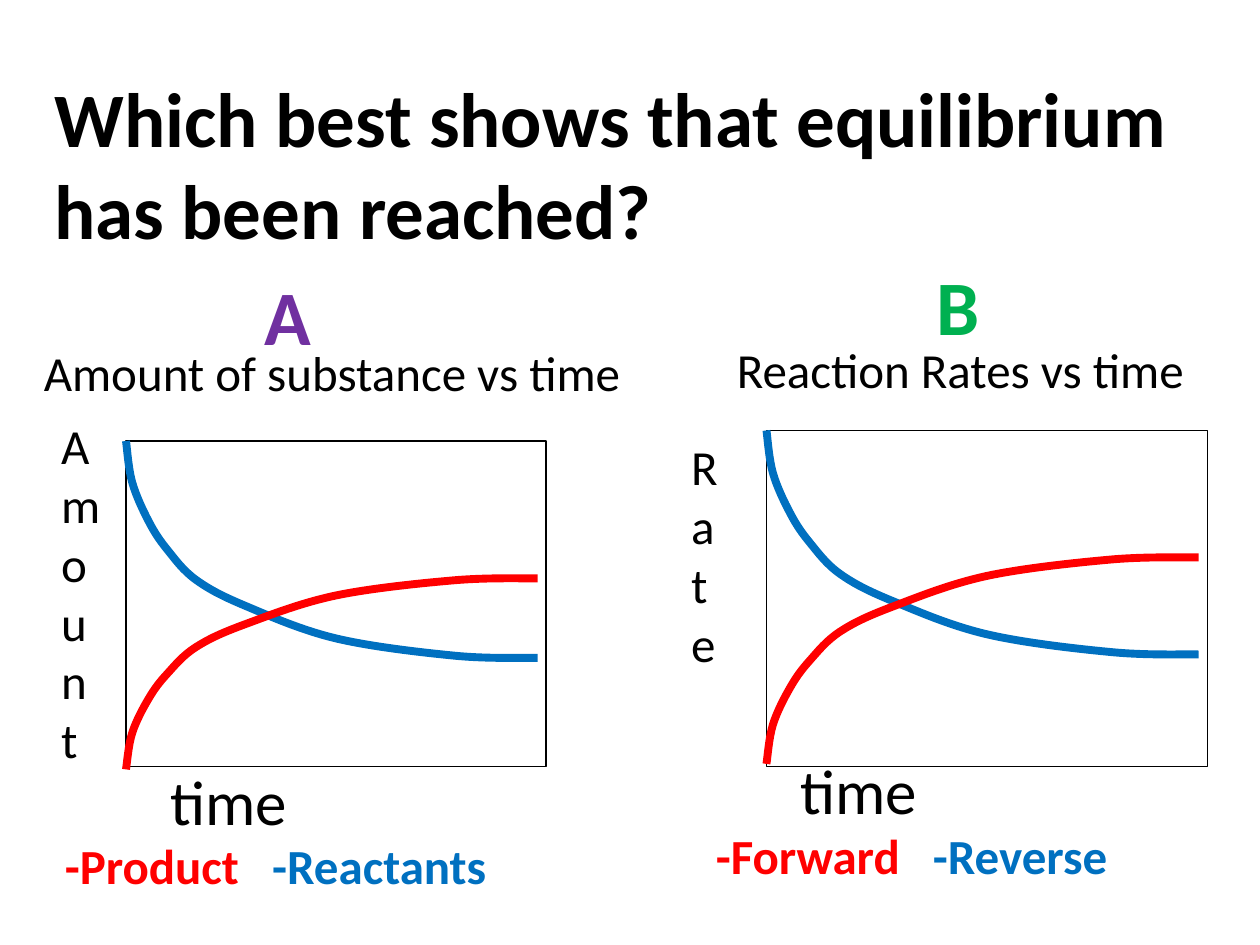
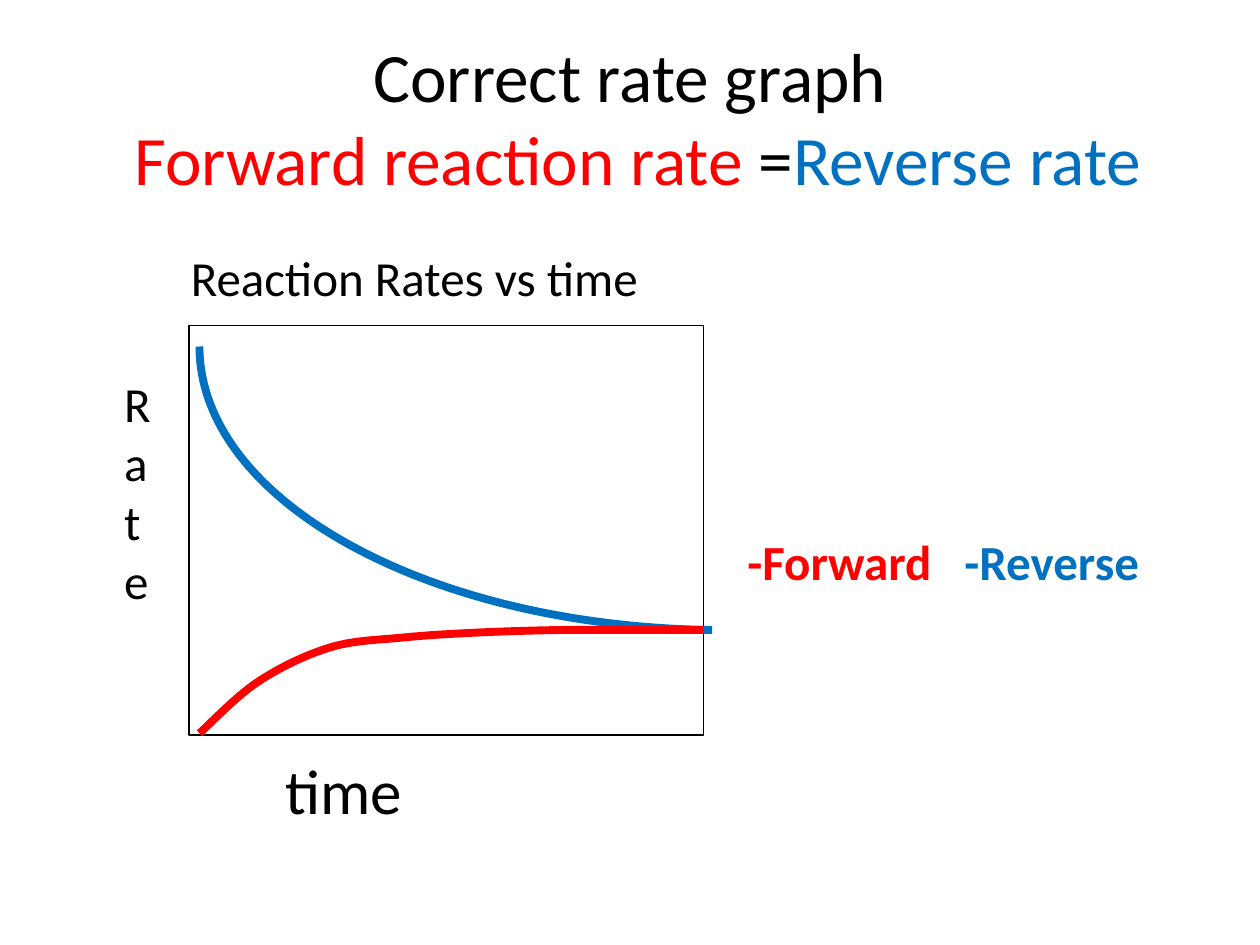
from lxml import etree
from pptx import Presentation
from pptx.dml.color import RGBColor
from pptx.enum.shapes import MSO_SHAPE
from pptx.enum.text import MSO_ANCHOR, PP_ALIGN
from pptx.oxml.ns import qn
from pptx.util import Pt

RECTANGLE = MSO_SHAPE.RECTANGLE
TOP, MIDDLE = MSO_ANCHOR.TOP, MSO_ANCHOR.MIDDLE
LEFT, CENTER = PP_ALIGN.LEFT, PP_ALIGN.CENTER

FONT = "Calibri"
BLACK, WHITE, RED, BLUE = "000000", "FFFFFF", "FF0000", "0070C0"
PURPLE, GREEN = "7030A0", "00B050"
TITLE_SIZE, ANSWER_TITLE_SIZE, TIME_SIZE, LABEL_SIZE = 44, 39.6, 36, 28

QUESTION = "Which best shows that equilibrium has been reached?"
ANSWER = [("Correct rate graph", BLACK), ("\n", BLACK), (" ", BLACK),
          ("Forward reaction rate ", RED), ("=", BLACK), ("Reverse rate", BLUE)]

# Boxes are left, top, width, height; heights of curve ends are slide positions.
AMOUNT_GRAPH = {
    "frame": (72, 252, 240, 186),
    "heading": ("Amount of substance vs time", (18, 192, 402, 41)),
    "axis": ("Amount", (30, 234, 12, 186)),
    "time": (90.3, 432, 156, 60),
    "legend": ("-Product", "-Reactants", 118.5, (30, 474, 288, 41)),
    "letter": ("A", PURPLE, (144, 150, 54, 60)),
    "red_ends": (439.7, 330.5),
}
RATE_GRAPH = {
    "frame": (438, 246, 252, 192),
    "heading": ("Reaction Rates vs time", (414, 190.4, 288, 41)),
    "axis": ("Rate", (390, 246, 12, 186)),
    "time": (450.3, 426, 156, 60),
    "legend": ("-Forward", "-Reverse", 124, (402, 468, 318, 41)),
    "letter": ("B", GREEN, (528, 144, 54, 60)),
    "red_ends": (436.5, 318.5),
}
CORRECT_GRAPH = {
    "frame": (108, 186, 294, 234),
    "heading": ("Reaction Rates vs time", (102, 138, 288, 41)),
    "axis": ("Rate", (66, 210, 12, 186)),
    "time": (156, 426, 156, 60),
    "legend": ("-Forward", "-Reverse", 124, (420, 300, 300, 41)),
}
# Progress of a reaction: share of the time, share of the change
REACTION_KNOTS = [(0, 0), (0.015, 0.19), (0.055, 0.37), (0.1, 0.5), (0.17, 0.64),
                  (0.29, 0.76), (0.51, 0.91), (0.8, 0.99), (1, 1)]
FORWARD_KNOTS = [(114, 419), (147.6, 389.5), (188.6, 370), (230.4, 364.3),
                 (274.3, 361.4), (319.7, 360), (355, 360), (402, 360)]
# Start, two control points and end of one Bézier segment
REVERSE_CURVE = [(114, 198), (114, 285.8), (244, 357.8), (407, 360)]


def color(hex_value):
    return RGBColor.from_string(hex_value)


def add_text(slide, text, box, size=LABEL_SIZE, hex_value=BLACK, bold=False,
             align=LEFT, anchor=TOP, tab=None):
    """Add a text box; text is a string or a list of (string, colour) runs."""
    shape = slide.shapes.add_textbox(*map(Pt, box))
    frame = shape.text_frame
    frame.word_wrap = True
    frame.vertical_anchor = anchor
    paragraph = frame.paragraphs[0]
    paragraph.alignment = align
    if tab:
        properties = paragraph._p.get_or_add_pPr()
        stops = etree.SubElement(properties, qn("a:tabLst"))
        etree.SubElement(stops, qn("a:tab"), pos=str(Pt(tab)), algn="l")
    runs = [(text, hex_value)] if isinstance(text, str) else text
    for words, run_color in runs:
        if words == "\n":
            paragraph.add_line_break()
            continue
        run = paragraph.add_run()
        run.text = words
        run.font.name = FONT
        run.font.size = Pt(size)
        run.font.bold = bold
        run.font.color.rgb = color(run_color)


def smooth(knots):
    """Return the two control points of each segment of a Catmull-Rom curve."""
    padded = [knots[0], *knots, knots[-1]]
    return [
        (tuple(b + (c - a) / 6 for a, b, c in zip(before, start, end)),
         tuple(c - (d - b) / 6 for b, c, d in zip(start, end, after)))
        for before, start, end, after
        in zip(padded, padded[1:], padded[2:], padded[3:])]


def add_curve(slide, knots, controls, hex_value):
    """Draw a Bézier curve through the knots, with one control pair a segment."""
    points = [(Pt(x), Pt(y)) for x, y in knots]
    builder = slide.shapes.build_freeform(*points[0])
    builder.add_line_segments(points[1:], close=False)
    shape = builder.convert_to_shape()
    segments = list(shape._element.iter(qn("a:lnTo")))
    for segment, pair in zip(segments, controls):
        segment.tag = qn("a:cubicBezTo")
        for index, (x, y) in enumerate(pair):
            point = etree.Element(qn("a:pt"), x=str(Pt(x) - shape.left),
                                  y=str(Pt(y) - shape.top))
            segment.insert(index, point)
    shape.shadow.inherit = False
    shape.fill.background()
    shape.line.color.rgb = color(hex_value)
    shape.line.width = Pt(4.5)


def add_reaction_curve(slide, frame, start, end, hex_value):
    left, _, width, _ = frame
    knots = [(left + 0.98 * width * time, start + (end - start) * change)
             for time, change in REACTION_KNOTS]
    add_curve(slide, knots, smooth(knots), hex_value)


def add_graph(slide, graph):
    """Add the frame and all labels of a graph."""
    shape = slide.shapes.add_shape(RECTANGLE, *map(Pt, graph["frame"]))
    shape.shadow.inherit = False
    shape.fill.solid()
    shape.fill.fore_color.rgb = color(WHITE)
    shape.line.color.rgb = color(BLACK)
    shape.line.width = Pt(0.75)
    add_text(slide, *graph["heading"])
    add_text(slide, *graph["axis"])
    add_text(slide, "time", graph["time"], size=TIME_SIZE)
    red_label, blue_label, tab, box = graph["legend"]
    add_text(slide, [(red_label + "\t", RED), (blue_label, BLUE)], box,
             bold=True, tab=tab)


def build_question(slide):
    add_text(slide, QUESTION, (24, 12, 660, 162), size=TITLE_SIZE, bold=True,
             anchor=MIDDLE)
    for graph in (AMOUNT_GRAPH, RATE_GRAPH):
        add_graph(slide, graph)
        _, top, _, height = graph["frame"]
        add_reaction_curve(slide, graph["frame"], top, top + height * 2 / 3, BLUE)
        add_reaction_curve(slide, graph["frame"], *graph["red_ends"], RED)
        letter, letter_color, box = graph["letter"]
        add_text(slide, letter, box, size=TITLE_SIZE, hex_value=letter_color,
                 bold=True)


def build_answer(slide):
    add_text(slide, ANSWER, (36, 21.6, 648, 90), size=ANSWER_TITLE_SIZE,
             align=CENTER, anchor=MIDDLE)
    add_graph(slide, CORRECT_GRAPH)
    start, *control_pair, end = REVERSE_CURVE
    add_curve(slide, [start, end], [control_pair], BLUE)
    add_curve(slide, FORWARD_KNOTS, smooth(FORWARD_KNOTS), RED)


def main():
    presentation = Presentation()
    presentation.slide_width, presentation.slide_height = Pt(720), Pt(540)
    blank = presentation.slide_layouts[6]
    for build in (build_question, build_answer):
        build(presentation.slides.add_slide(blank))
    presentation.save("out.pptx")


if __name__ == "__main__":
    main()
